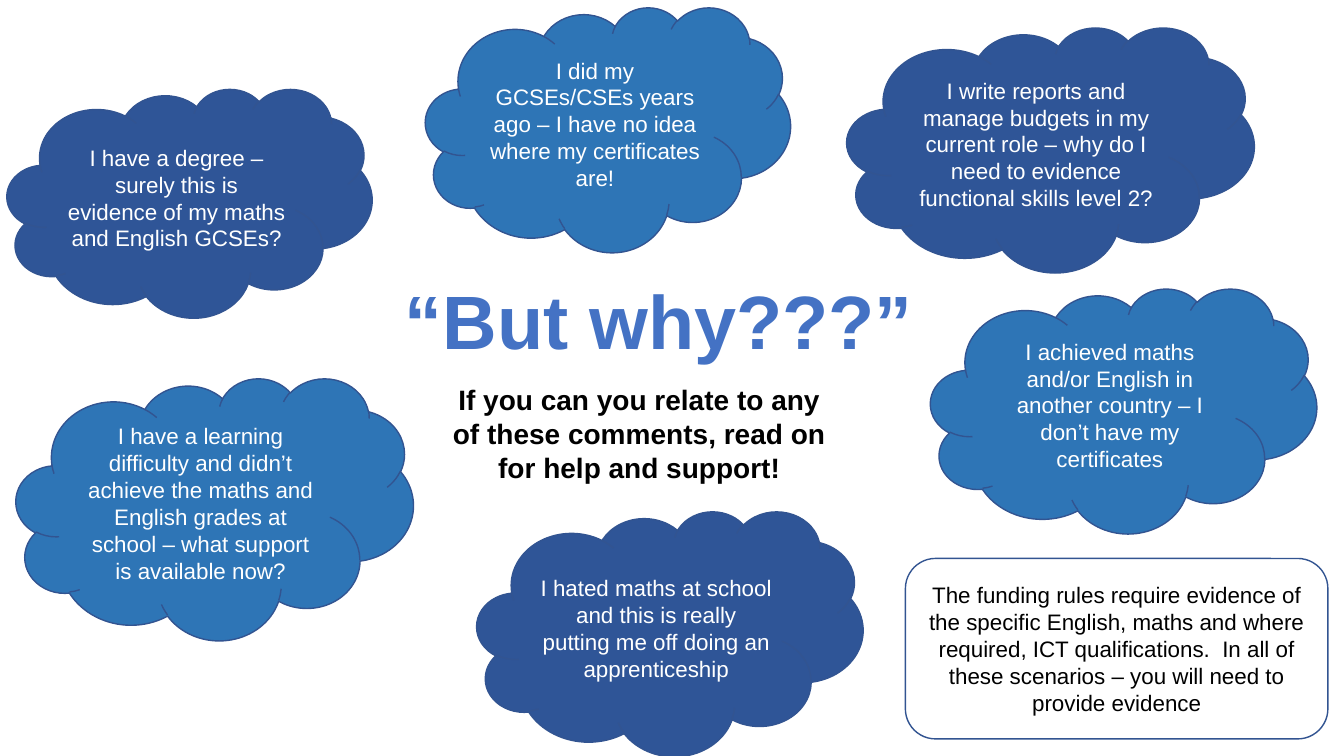
from pptx import Presentation
from pptx import util as u
from pptx.dml.color import RGBColor
from pptx.enum import shapes, text

PX = 9144  # EMU; 100 px to the inch
FONT = "Arial"
COLOURS = {
    "navy": "2F5597",
    "blue": "2E75B6",
    "outline": "325491",
    "title": "4472C4",
    "white": "FFFFFF",
    "black": "000000",
}

CLOUDS = [
    ((7, 88, 362, 227), "navy",
     "I have a degree – surely this is evidence of my maths and English GCSEs?"),
    ((422, 7, 362, 243), "blue",
     "I did my GCSEs/CSEs years ago – I have no idea where my certificates are!"),
    ((473, 507, 383, 243), "navy",
     "I hated maths at school and this is really putting me off doing an apprenticeship"),
    ((16, 375, 394, 260), "blue",
     "I have a learning difficulty and didn’t achieve the maths and English grades "
     "at school – what support is available now?"),
    ((923, 286, 383, 243), "blue",
     "I achieved maths and/or English in another country – I don’t have my certificates"),
    ((840, 27, 404, 243), "navy",
     "I write reports and manage budgets in my current role – why do I need to evidence "
     "functional skills level 2?"),
]


def colour(name):
    return RGBColor.from_string(COLOURS[name])


def emu(box):
    return [u.Emu(length * PX) for length in box]


def write(shape, words, size, ink, anchor, bold=False):
    frame = shape.text_frame
    frame.word_wrap = True
    frame.auto_size = text.MSO_AUTO_SIZE.NONE
    frame.vertical_anchor = anchor
    para = frame.paragraphs[0]
    para.alignment = text.PP_ALIGN.CENTER
    span = para.add_run()
    span.text = words
    span.font.name = FONT
    span.font.size = u.Pt(size)
    span.font.bold = bold
    span.font.color.rgb = colour(ink)
    return para


def add_title(page, box, words):
    title = page.shapes.title
    title.left, title.top, title.width, title.height = emu(box)
    para = write(title, words, 54, "title", text.MSO_ANCHOR.BOTTOM, bold=True)
    para.line_spacing = 0.9


def add_invitation(page, box, words):
    invitation = page.shapes.add_textbox(*emu(box))
    write(invitation, words, 20, "black", text.MSO_ANCHOR.TOP, bold=True)


def add_bubble(page, kind, box, fill, ink, words):
    """Add an outlined shape with centred words."""
    bubble = page.shapes.add_shape(kind, *emu(box))
    bubble.shadow.inherit = False
    bubble.fill.solid()
    bubble.fill.fore_color.rgb = colour(fill)
    bubble.line.color.rgb = colour("outline")
    bubble.line.width = u.Pt(1)
    write(bubble, words, 16, ink, text.MSO_ANCHOR.MIDDLE)


def build_comments_slide(deck):
    page = deck.slides.add_slide(deck.slide_layouts[5])
    add_title(page, (312, 213, 683, 155), "“But why???”")
    for box, fill, words in CLOUDS:
        add_bubble(page, shapes.MSO_SHAPE.CLOUD, box, fill, "white", words)
    add_invitation(page, (432, 375, 404, 111),
                   "If you can you relate to any of these comments, "
                   "read on for help and support!")
    add_bubble(page, shapes.MSO_SHAPE.ROUNDED_RECTANGLE, (898, 554, 419, 179),
               "white", "black",
               "The funding rules require evidence of the specific English, maths and "
               "where required, ICT qualifications.  In all of these scenarios – "
               "you will need to provide evidence")


def main():
    deck = Presentation()
    deck.slide_width, deck.slide_height = emu((1333, 750))
    build_comments_slide(deck)
    deck.save("out.pptx")


if __name__ == "__main__":
    main()
